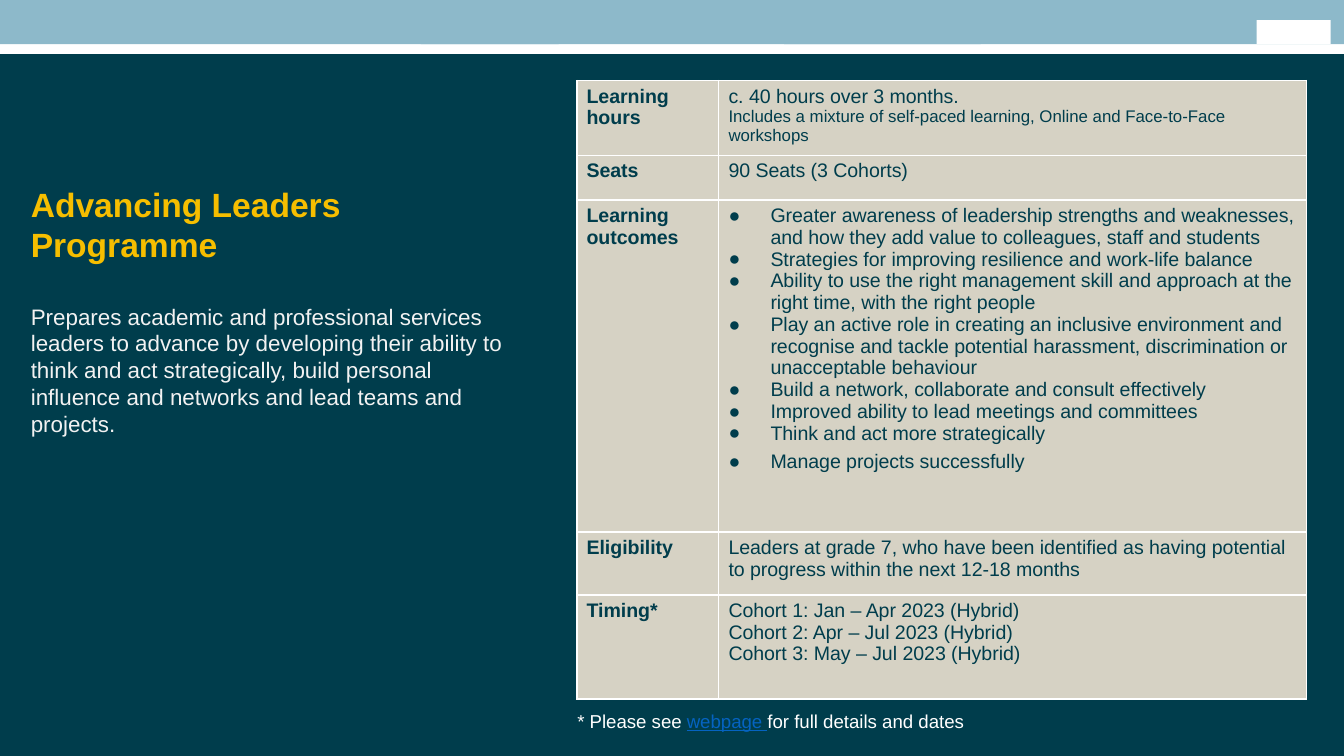
from dataclasses import dataclass

from lxml.etree import SubElement
from pptx import Presentation
from pptx.dml.color import RGBColor
from pptx.enum.shapes import MSO_SHAPE
from pptx.enum.text import MSO_ANCHOR
from pptx.oxml.ns import qn
from pptx.util import Pt


@dataclass(frozen=True)
class Theme:
    font: str = "Arial"
    navy: str = "003D4C"
    sky: str = "8DB9CA"
    stone: str = "D6D2C4"
    gold: str = "F6BE00"
    pale: str = "F2F2F2"
    white: str = "FFFFFF"
    link: str = "0563C1"
    title_size: float = 18
    body_size: float = 12
    table_size: float = 10.5
    detail_size: float = 9
    note_size: float = 10


theme = Theme()


def add_text(paragraph, text, size=theme.table_size, color=theme.navy, bold=False,
             underline=False, bullet=False, before=0):
    if bullet:
        properties = paragraph._p.get_or_add_pPr()
        properties.set("marL", str(Pt(22.5)))
        properties.set("indent", str(-Pt(22.5)))
        SubElement(properties, qn("a:buFont")).set("typeface", theme.font)
        SubElement(properties, qn("a:buChar")).set("char", "●")
    paragraph.space_before = Pt(before)
    for index, line in enumerate(text.split("\n")):
        if index:
            paragraph.add_line_break()
        run = paragraph.add_run()
        run.text = line
        run.font.name = theme.font
        run.font.size = Pt(size)
        run.font.bold = bold
        run.font.underline = underline
        run.font.color.rgb = RGBColor.from_string(color)


presentation = Presentation()
presentation.slide_width, presentation.slide_height = Pt(720), Pt(405)
slide = presentation.slides.add_slide(presentation.slide_layouts[6])

# Top band in three overlapping parts, plain badge and dark background panel
for left, top, width, height, color in [
    (225.4, -0.7, 300, 24.4, theme.sky),
    (-0.7, -0.7, 300, 24.4, theme.sky),
    (420, -0.7, 300, 24.4, theme.sky),
    (673.2, 10.8, 39.6, 12.9, theme.white),
    (0, 29, 720, 376, theme.navy),
]:
    shape = slide.shapes.add_shape(MSO_SHAPE.RECTANGLE, Pt(left), Pt(top), Pt(width), Pt(height))
    shape.shadow.inherit = False
    shape.fill.solid()
    shape.fill.fore_color.rgb = RGBColor.from_string(color)
    shape.line.fill.background()

# Programme details: label, row height, paragraphs with their format
outcomes = [
    "Greater awareness of leadership strengths and weaknesses, and how they add value to colleagues, staff and students",
    "Strategies for improving resilience and work-life balance",
    "Ability to use the right management skill and approach at the right time, with the right people",
    "Play an active role in creating an inclusive environment and recognise and tackle potential harassment, discrimination or unacceptable behaviour",
    "Build a network, collaborate and consult effectively",
    "Improved ability to lead meetings and committees",
    "Think and act more strategically",
]
cohorts = ["Jan – Apr", "Apr – Jul", "May – Jul"]
rows = [
    ("Learning hours", 40, [
        ("c. 40 hours over 3 months.", {}),
        ("Includes a mixture of self-paced learning, Online and Face-to-Face workshops",
         {"size": theme.detail_size}),
    ]),
    ("Seats", 24, [("90 Seats (3 Cohorts)", {})]),
    ("Learning outcomes", 177.9,
     [(outcome, {"bullet": True}) for outcome in outcomes]
     + [("Manage projects successfully", {"bullet": True, "before": 3.5})]),
    ("Eligibility", 33.7, [
        ("Leaders at grade 7, who have been identified as having potential to progress within the next 12-18 months", {}),
    ]),
    ("Timing*", 55.7, [
        (f"Cohort {number}: {months} 2023 (Hybrid)", {})
        for number, months in enumerate(cohorts, start=1)
    ]),
]
table_height = sum(height for _, height, _ in rows)
table = slide.shapes.add_table(len(rows), 2, Pt(309), Pt(43.2), Pt(391), Pt(table_height)).table
table.first_row = table.horz_banding = False
table.columns[0].width, table.columns[1].width = Pt(76), Pt(315)

for row_index, (label, height, details) in enumerate(rows):
    table.rows[row_index].height = Pt(height)
    for column_index, entries in enumerate([[(label, {"bold": True})], details]):
        cell = table.cell(row_index, column_index)
        cell.margin_left = cell.margin_right = Pt(5.3)
        cell.margin_top = cell.margin_bottom = Pt(2.6)
        for entry_index, (text, text_format) in enumerate(entries):
            frame = cell.text_frame
            paragraph = frame.add_paragraph() if entry_index else frame.paragraphs[0]
            add_text(paragraph, text, **text_format)
        # White cell borders come before the fill in the cell properties
        properties = cell._tc.get_or_add_tcPr()
        for side in ("lnL", "lnR", "lnT", "lnB"):
            border = SubElement(properties, qn(f"a:{side}"), w=str(Pt(1)))
            fill = SubElement(border, qn("a:solidFill"))
            SubElement(fill, qn("a:srgbClr"), val=theme.white)
        cell.fill.solid()
        cell.fill.fore_color.rgb = RGBColor.from_string(theme.stone)

# Programme title and summary
frame = slide.shapes.add_textbox(Pt(9.4), Pt(93.6), Pt(279.4), Pt(145.4)).text_frame
frame.word_wrap = True
frame.vertical_anchor = MSO_ANCHOR.MIDDLE
add_text(frame.paragraphs[0], "Advancing Leaders\nProgramme",
         size=theme.title_size, color=theme.gold, bold=True)
add_text(frame.add_paragraph(),
         "Prepares academic and professional services leaders to advance by developing their ability to "
         "think and act strategically, build personal influence and networks and lead teams and projects.",
         size=theme.body_size, color=theme.pale, before=20.5)

# Footnote
frame = slide.shapes.add_textbox(Pt(302.2), Pt(376.6), Pt(304), Pt(19.4)).text_frame
frame.word_wrap = True
for text, color, underline in [
    ("* Please see ", theme.white, False),
    ("webpage ", theme.link, True),
    ("for full details and dates", theme.white, False),
]:
    add_text(frame.paragraphs[0], text, size=theme.note_size, color=color, underline=underline)

presentation.save("out.pptx")
